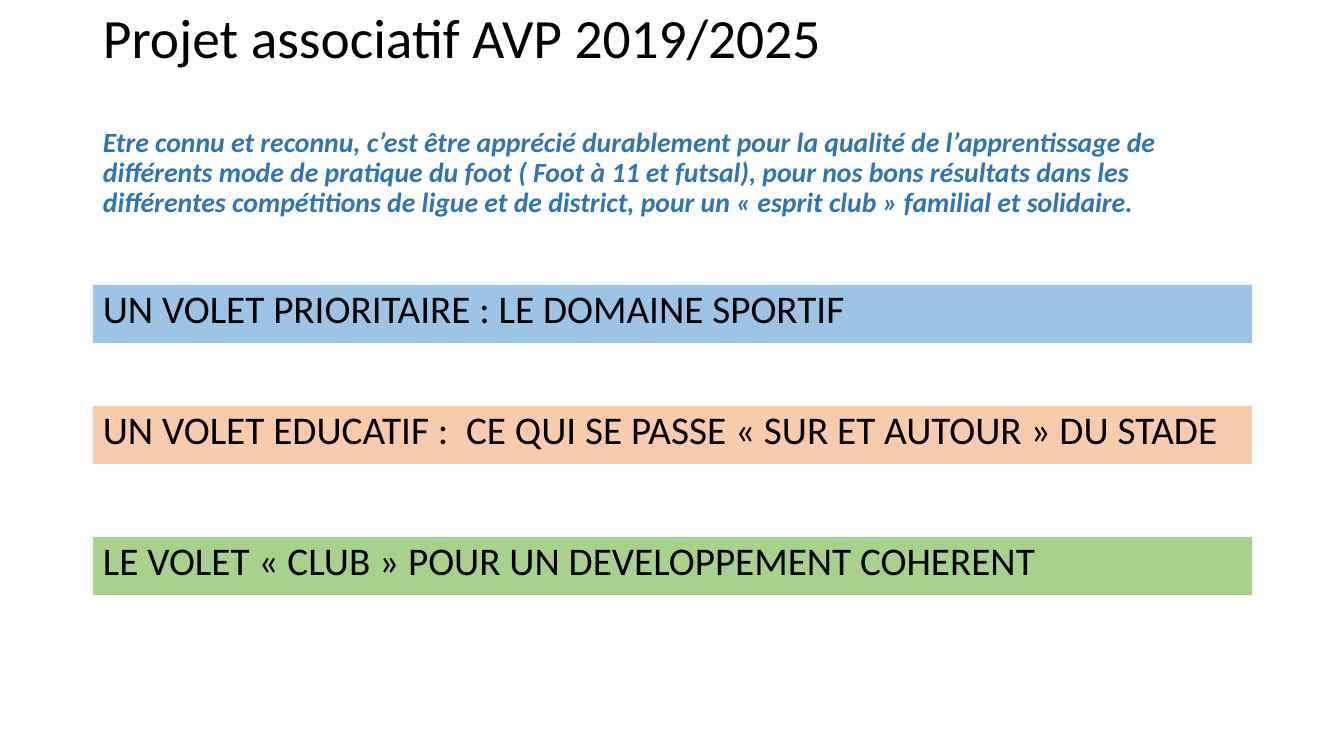
"""Build the slide presenting the club project and its three strands."""
from pptx import Presentation
from pptx.dml.color import RGBColor
from pptx.enum.shapes import MSO_SHAPE
from pptx.enum.text import MSO_ANCHOR, PP_ALIGN
from pptx.util import Emu, Pt

THEME = {
    "font": "Calibri",
    "text": "000000", "intro": "2E75B6",
    "sport": "9DC3E6", "education": "F8CBAD", "club": "A9D18E",
    "title_size": 39.6, "intro_size": 19.8, "strand_size": 28,
}
LEFT, WIDTH, STRAND_HEIGHT = 93, 1159, 58


def px(length):
    return Emu(round(length * 914400 / 100.8))


def write(box, text, size, color, emphasis=False, space_before=0):
    frame = box.text_frame
    frame.word_wrap = True
    frame.vertical_anchor = MSO_ANCHOR.TOP
    para = frame.paragraphs[0]
    para.alignment = PP_ALIGN.LEFT
    para.line_spacing = 0.9
    para.space_before = Pt(space_before)
    span = para.add_run()
    span.text = text
    span.font.name = THEME["font"]
    span.font.size = Pt(THEME[size])
    span.font.bold = span.font.italic = emphasis
    span.font.color.rgb = RGBColor.from_string(THEME[color])


deck = Presentation()
deck.slide_width, deck.slide_height = px(1344), px(756)
page = deck.slides.add_slide(deck.slide_layouts[6])

headings = [
    (6, 72, "Projet associatif AVP 2019/2025", "title_size", "text", False),
    (124, 102, "Etre connu et reconnu, c’est être apprécié durablement pour la qualité "
     "de l’apprentissage de différents mode de pratique du foot ( Foot à 11 et futsal), "
     "pour nos bons résultats dans les différentes compétitions de ligue et de district, "
     "pour un « esprit club » familial et solidaire.", "intro_size", "intro", True),
]
for top, height, text, size, color, emphasis in headings:
    box = page.shapes.add_textbox(px(LEFT), px(top), px(WIDTH), px(height))
    write(box, text, size, color, emphasis)

strands = [
    (285, "sport", "UN VOLET PRIORITAIRE : LE DOMAINE SPORTIF"),
    (406, "education", "UN VOLET EDUCATIF :  CE QUI SE PASSE « SUR ET AUTOUR » DU STADE"),
    (537, "club", "LE VOLET « CLUB » POUR UN DEVELOPPEMENT COHERENT"),
]
for top, fill, text in strands:
    band = page.shapes.add_shape(
        MSO_SHAPE.RECTANGLE, px(LEFT), px(top), px(WIDTH), px(STRAND_HEIGHT))
    band.shadow.inherit = False
    band.fill.solid()
    band.fill.fore_color.rgb = RGBColor.from_string(THEME[fill])
    band.line.fill.background()
    write(band, text, "strand_size", "text", space_before=10)

deck.save("out.pptx")
